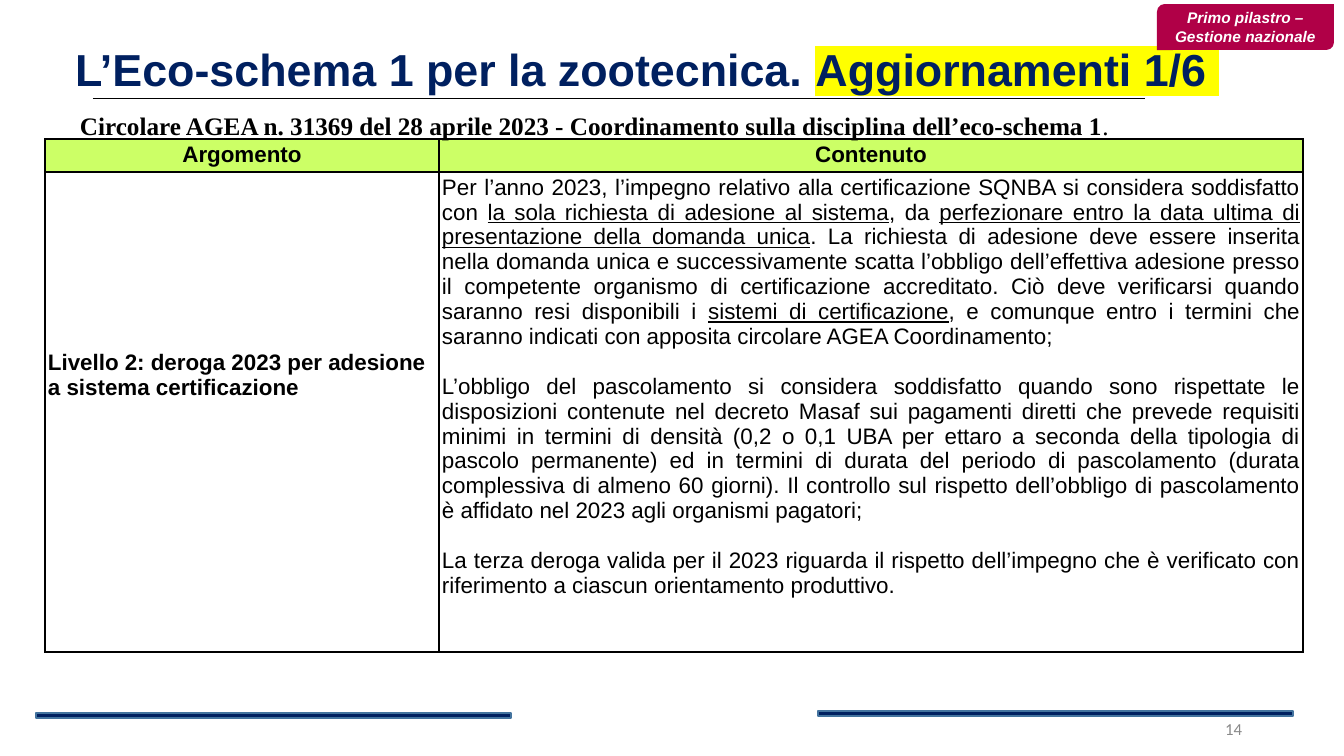
from lxml import etree
from pptx import Presentation
from pptx.dml.color import RGBColor
from pptx.enum.shapes import MSO_CONNECTOR, MSO_SHAPE
from pptx.enum.text import MSO_ANCHOR, MSO_AUTO_SIZE, PP_ALIGN
from pptx.oxml.ns import qn
from pptx.util import Emu, Pt

NAVY = RGBColor(0x00, 0x20, 0x60)
BAR_EDGE = RGBColor(0x43, 0x73, 0x9E)
CRIMSON = RGBColor(0xB0, 0x00, 0x47)
LIME = RGBColor(0xCC, 0xFF, 0x66)
GREY = RGBColor(0x89, 0x89, 0x89)
BLACK = RGBColor(0x00, 0x00, 0x00)
WHITE = RGBColor(0xFF, 0xFF, 0xFF)
YELLOW = RGBColor(0xFF, 0xFF, 0x00)

PX_PER_INCH = 100.8
CELL_MARGIN = 3
LINE_HEIGHT = 25

TOPIC = "Livello 2: deroga 2023 per adesione a sistema certificazione"
# Each paragraph is a list of pieces; every second piece is underlined.
CONTENT = [
    [
        "Per l’anno 2023, l’impegno relativo alla certificazione SQNBA si considera soddisfatto con ",
        "la sola richiesta di adesione al sistema",
        ", da ",
        "perfezionare entro la data ultima di presentazione della domanda unica",
        ". La richiesta di adesione deve essere inserita nella domanda unica e successivamente "
        "scatta l’obbligo dell’effettiva adesione presso il competente organismo di certificazione "
        "accreditato. Ciò deve verificarsi quando saranno resi disponibili i ",
        "sistemi di certificazione",
        ", e comunque entro i termini che saranno indicati con apposita circolare AGEA Coordinamento;",
    ],
    [
        "L’obbligo del pascolamento si considera soddisfatto quando sono rispettate le disposizioni "
        "contenute nel decreto Masaf sui pagamenti diretti che prevede requisiti minimi in termini "
        "di densità (0,2 o 0,1 UBA per ettaro a seconda della tipologia di pascolo permanente) ed in "
        "termini di durata del periodo di pascolamento (durata complessiva di almeno 60 giorni). Il "
        "controllo sul rispetto dell’obbligo di pascolamento è affidato nel 2023 agli organismi "
        "pagatori;",
    ],
    [
        "La terza deroga valida per il 2023 riguarda il rispetto dell’impegno che è verificato con "
        "riferimento a ciascun orientamento produttivo.",
    ],
]


def px(length):
    return Emu(round(length * 914400 / PX_PER_INCH))


class SlideBuilder:
    def __init__(self, deck):
        self.deck = deck
        self.page = deck.slides.add_slide(deck.slide_layouts[5])

    def span(self, para, text, size, color=BLACK, font="Arial", bold=False, italic=False,
             underline=False, highlight=None):
        span = para.add_run()
        span.text = text
        span.font.name, span.font.size = font, Pt(size)
        span.font.bold, span.font.italic, span.font.underline = bold, italic, underline
        span.font.color.rgb = color
        if highlight is not None:
            mark = etree.Element(qn("a:highlight"))
            etree.SubElement(mark, qn("a:srgbClr"), val=str(highlight))
            span.font.fill  # the highlight sits between the text fill and the typeface
            span.font._element.find(qn("a:latin")).addprevious(mark)

    def title(self, left, top, width, height):
        box = self.page.shapes.title
        box.left, box.top, box.width, box.height = map(px, (left, top, width, height))
        frame = box.text_frame
        frame.auto_size = MSO_AUTO_SIZE.NONE
        frame.vertical_anchor = MSO_ANCHOR.MIDDLE
        para = frame.paragraphs[0]
        para.alignment = PP_ALIGN.LEFT
        return para

    def text(self, left, top, width, height, align, anchor=MSO_ANCHOR.TOP):
        box = self.page.shapes.add_textbox(*map(px, (left, top, width, height)))
        box.text_frame.word_wrap = True
        box.text_frame.vertical_anchor = anchor
        para = box.text_frame.paragraphs[0]
        para.alignment = align
        return para

    def shape(self, kind, left, top, width, height, fill, edge=None):
        shape = self.page.shapes.add_shape(kind, *map(px, (left, top, width, height)))
        shape.shadow.inherit = False
        shape.fill.solid()
        shape.fill.fore_color.rgb = fill
        if edge is None:
            shape.line.fill.background()
        else:
            shape.line.color.rgb, shape.line.width = edge, Pt(1)
        return shape

    def rule(self, left, right, top):
        line = self.page.shapes.add_connector(
            MSO_CONNECTOR.STRAIGHT, px(left), px(top), px(right), px(top))
        line.line.color.rgb, line.line.width = BLACK, Pt(0.5)
        etree.SubElement(line._element.spPr, qn("a:effectLst"))

    def table(self, left, top, widths, heights):
        table = self.page.shapes.add_table(
            len(heights), len(widths), px(left), px(top), px(sum(widths)), px(sum(heights))).table
        table.first_row = table.horz_banding = False
        for column, width in zip(table.columns, widths):
            column.width = px(width)
        for row, height in zip(table.rows, heights):
            row.height = px(height)
        return table

    def cell(self, cell, fill):
        cell.margin_left = cell.margin_right = px(CELL_MARGIN)
        cell.margin_top = cell.margin_bottom = px(CELL_MARGIN)
        properties = cell._tc.get_or_add_tcPr()
        for side in ("lnL", "lnR", "lnT", "lnB"):
            border = etree.SubElement(properties, qn(f"a:{side}"), w=str(Pt(1)))
            paint = etree.SubElement(border, qn("a:solidFill"))
            etree.SubElement(paint, qn("a:srgbClr"), val=str(BLACK))
        cell.fill.solid()
        cell.fill.fore_color.rgb = fill
        return cell.text_frame


def main():
    deck = Presentation()
    deck.slide_width, deck.slide_height = px(1344), px(756)
    slide = SlideBuilder(deck)

    # Page number, title rule and footer bars
    number = slide.text(950, 709, 302, 40, PP_ALIGN.RIGHT, MSO_ANCHOR.MIDDLE)
    slide.span(number, "14", 12, GREY, "Calibri")
    slide.rule(93, 1145, 98)
    for left, top in ((818, 711), (36, 713)):
        slide.shape(MSO_SHAPE.RECTANGLE, left, top, 475, 5, NAVY, BAR_EDGE)

    # Title
    title = slide.title(65, 36, 1219, 65)
    slide.span(title, "L’Eco-schema 1 per la zootecnica. ", 32, NAVY, bold=True)
    slide.span(title, "Aggiornamenti 1/6 ", 32, NAVY, bold=True, highlight=YELLOW)

    # Section tag
    tag = slide.shape(MSO_SHAPE.ROUND_2_DIAG_RECTANGLE, 1157, 4, 177, 46, CRIMSON)
    tag.text_frame.vertical_anchor = MSO_ANCHOR.MIDDLE
    tag_para = tag.text_frame.paragraphs[0]
    tag_para.alignment = PP_ALIGN.CENTER
    slide.span(tag_para, "Primo pilastro – Gestione nazionale", 11, WHITE, bold=True, italic=True)

    # Table header
    table = slide.table(45, 139, (394, 864), (33, 480))
    for column, heading in enumerate(("Argomento", "Contenuto")):
        para = slide.cell(table.cell(0, column), LIME).paragraphs[0]
        para.alignment = PP_ALIGN.CENTER
        slide.span(para, heading, 16, bold=True)

    # Table body
    topic = slide.cell(table.cell(1, 0), WHITE)
    table.cell(1, 0).margin_top = px(CELL_MARGIN + 7 * LINE_HEIGHT)
    slide.span(topic.paragraphs[0], TOPIC, 16, bold=True)
    content = slide.cell(table.cell(1, 1), WHITE)
    for index, pieces in enumerate(CONTENT):
        para = content.add_paragraph() if index else content.paragraphs[0]
        para.alignment = PP_ALIGN.JUSTIFY
        if index:
            para.space_before = px(LINE_HEIGHT)
        for order, piece in enumerate(pieces):
            slide.span(para, piece, 16, underline=order % 2 == 1)

    # Circular reference
    circular = slide.text(70, 101, 1246, 76, PP_ALIGN.JUSTIFY)
    circular.line_spacing = 1.15
    slide.span(circular, "Circolare AGEA n. 31369 del 28 aprile 2023 - Coordinamento sulla "
               "disciplina dell’eco-schema 1", 18, font="Times New Roman", bold=True)
    slide.span(circular, ".", 18, font="Times New Roman")

    deck.save("out.pptx")


if __name__ == "__main__":
    main()
